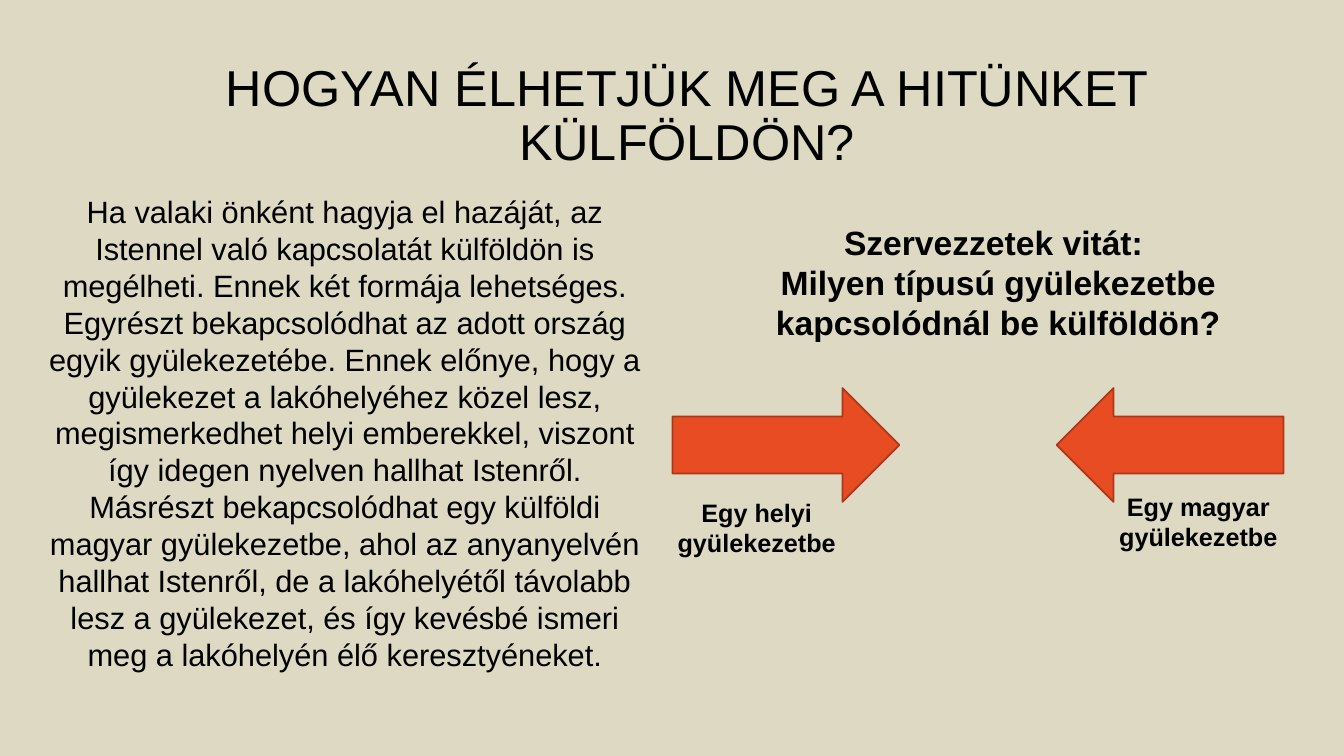
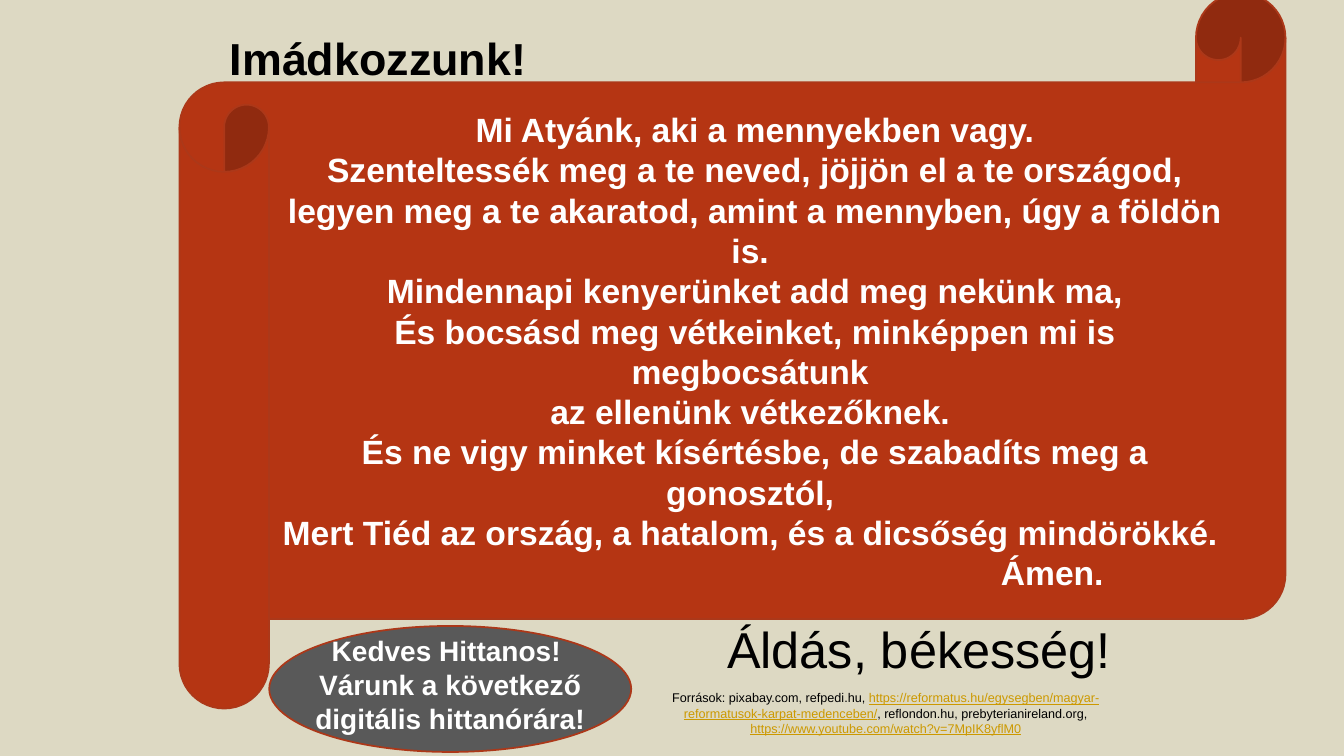
from pptx import Presentation
from pptx.dml.color import RGBColor
from pptx.enum.shapes import MSO_SHAPE
from pptx.enum.text import MSO_ANCHOR, MSO_AUTO_SIZE, PP_ALIGN
from pptx.oxml import parse_xml
from pptx.oxml.ns import nsdecls
from pptx.util import Inches, Pt

CENTER = PP_ALIGN.CENTER
TOP, MIDDLE = MSO_ANCHOR.TOP, MSO_ANCHOR.MIDDLE
FIXED = MSO_AUTO_SIZE.NONE
RIGHT, LEFT = MSO_SHAPE.RIGHT_ARROW, MSO_SHAPE.LEFT_ARROW
SCROLL, OVAL = MSO_SHAPE.HORIZONTAL_SCROLL, MSO_SHAPE.OVAL

SAND = RGBColor(0xDD, 0xD9, 0xC3)
BLACK = RGBColor(0, 0, 0)
WHITE = RGBColor(0xFF, 0xFF, 0xFF)
ORANGE = RGBColor(0xE8, 0x4C, 0x22)
RUST = RGBColor(0xB5, 0x35, 0x13)
EDGE = RGBColor(0xAC, 0x38, 0x19)
GRAY = RGBColor(0x59, 0x59, 0x59)
GOLD = RGBColor(0xCC, 0x99, 0x00)
FONT = "Arial"


def write(shape, box, lines, size, bold=False, color=BLACK, anchor=TOP):
    """Place the shape and fill it with centred paragraphs."""
    shape.left, shape.top, shape.width, shape.height = map(Inches, box)
    frame = shape.text_frame
    frame.word_wrap = True
    frame.auto_size = FIXED
    frame.vertical_anchor = anchor
    frame.text = "\n".join(lines)
    for par in frame.paragraphs:
        par.alignment = CENTER
        par.space_before = Pt(0)
        props = par._p.get_or_add_pPr()
        props.set("marL", "0")
        props.set("indent", "0")
        props.append(parse_xml(f"<a:buNone {nsdecls('a')}/>"))
        par.font.name = FONT
        par.font.size = Pt(size)
        par.font.bold = bold
        par.font.color.rgb = color
    return frame


def draw(slide, kind, box, fill):
    shape = slide.shapes.add_shape(kind, *map(Inches, box))
    shape.shadow.inherit = False
    shape.fill.solid()
    shape.fill.fore_color.rgb = fill
    shape.line.color.rgb = EDGE
    shape.line.width = Pt(1.25)
    return shape


prs = Presentation()
prs.slide_width, prs.slide_height = Inches(13.33), Inches(7.5)
back = prs.slide_master.background.fill
back.solid()
back.fore_color.rgb = SAND

# Slide 1: living our faith abroad
slide = prs.slides.add_slide(prs.slide_layouts[1])
frame = write(slide.shapes.title, (1.15, 0.29, 11.33, 1.75),
              ["HOGYAN ÉLHETJÜK MEG A HITÜNKET KÜLFÖLDÖN?"], 36, anchor=MIDDLE)
frame.paragraphs[0].line_spacing = 0.9

write(slide.placeholders[1], (0.34, 1.86, 6.16, 4.93), [
    "Ha valaki önként hagyja el hazáját, az Istennel való kapcsolatát "
    "külföldön is megélheti. Ennek két formája lehetséges. Egyrészt "
    "bekapcsolódhat az adott ország egyik gyülekezetébe. Ennek előnye, "
    "hogy a gyülekezet a lakóhelyéhez közel lesz, megismerkedhet helyi "
    "emberekkel, viszont így idegen nyelven hallhat Istenről. Másrészt "
    "bekapcsolódhat egy külföldi magyar gyülekezetbe, ahol az anyanyelvén "
    "hallhat Istenről, de a lakóhelyétől távolabb lesz a gyülekezet, és így "
    "kevésbé ismeri meg a lakóhelyén élő keresztyéneket."], 22)

write(slide.shapes.add_textbox(0, 0, 0, 0), (7.32, 2.15, 5.16, 1.31),
      ["Szervezzetek vitát: ",
       "Milyen típusú gyülekezetbe kapcsolódnál be külföldön?"], 24, True)

for kind, x, label, left, top in (
        (RIGHT, 6.67, "Egy helyi gyülekezetbe", 6.38, 4.88),
        (LEFT, 10.48, "Egy magyar gyülekezetbe", 10.76, 4.82)):
    draw(slide, kind, (x, 3.85, 2.25, 1.13), ORANGE)
    write(slide.shapes.add_textbox(0, 0, 0, 0), (left, top, 2.25, 0.71),
          [label], 18, True)

# Slide 2: closing prayer
slide = prs.slides.add_slide(prs.slide_layouts[5])
write(slide.shapes.title, (1.78, 0.27, 3.94, 0.6), ["Imádkozzunk!"], 32, True,
      anchor=MIDDLE)

area = (1.78, -0.07, 10.97, 7.1)
frame = write(draw(slide, SCROLL, area, RUST), area, [
    "Mi Atyánk, aki a mennyekben vagy.",
    "Szenteltessék meg a te neved, jöjjön el a te országod,",
    "legyen meg a te akaratod, amint a mennyben, úgy a földön is. ",
    "Mindennapi kenyerünket add meg nekünk ma,",
    "És bocsásd meg vétkeinket, minképpen mi is megbocsátunk ",
    "az ellenünk vétkezőknek. ",
    "És ne vigy minket kísértésbe, de szabadíts meg a gonosztól, ",
    "Mert Tiéd az ország, a hatalom, és a dicsőség mindörökké. ",
    "Ámen."], 24, True, WHITE, MIDDLE)
amen = frame.paragraphs[-1]._p.get_or_add_pPr()
amen.set("marL", str(Inches(5.9)))

draw(slide, OVAL, (2.67, 6.21, 3.59, 1.25), GRAY)
write(slide.shapes.add_textbox(0, 0, 0, 0), (2.67, 6.24, 3.59, 1.11),
      ["Kedves Hittanos! ", "Várunk a következő digitális hittanórára!"],
      20, True, WHITE)
write(slide.shapes.add_textbox(0, 0, 0, 0), (5.78, 6.08, 6.67, 0.71),
      ["Áldás, békesség!"], 36)

frame = write(slide.shapes.add_textbox(0, 0, 0, 0), (6.37, 6.8, 4.83, 0.56),
              ["Források: pixabay.com, refpedi.hu, "], 9)
for text, cited in (
        ("https://reformatus.hu/egysegben/magyar-reformatusok-karpat-medenceben/", True),
        (", reflondon.hu, prebyterianireland.org, ", False),
        ("https://www.youtube.com/watch?v=7MpIK8yflM0", True)):
    run = frame.paragraphs[0].add_run()
    run.text = text
    if cited:
        run.font.underline = True
        run.font.color.rgb = GOLD

prs.save("out.pptx")
